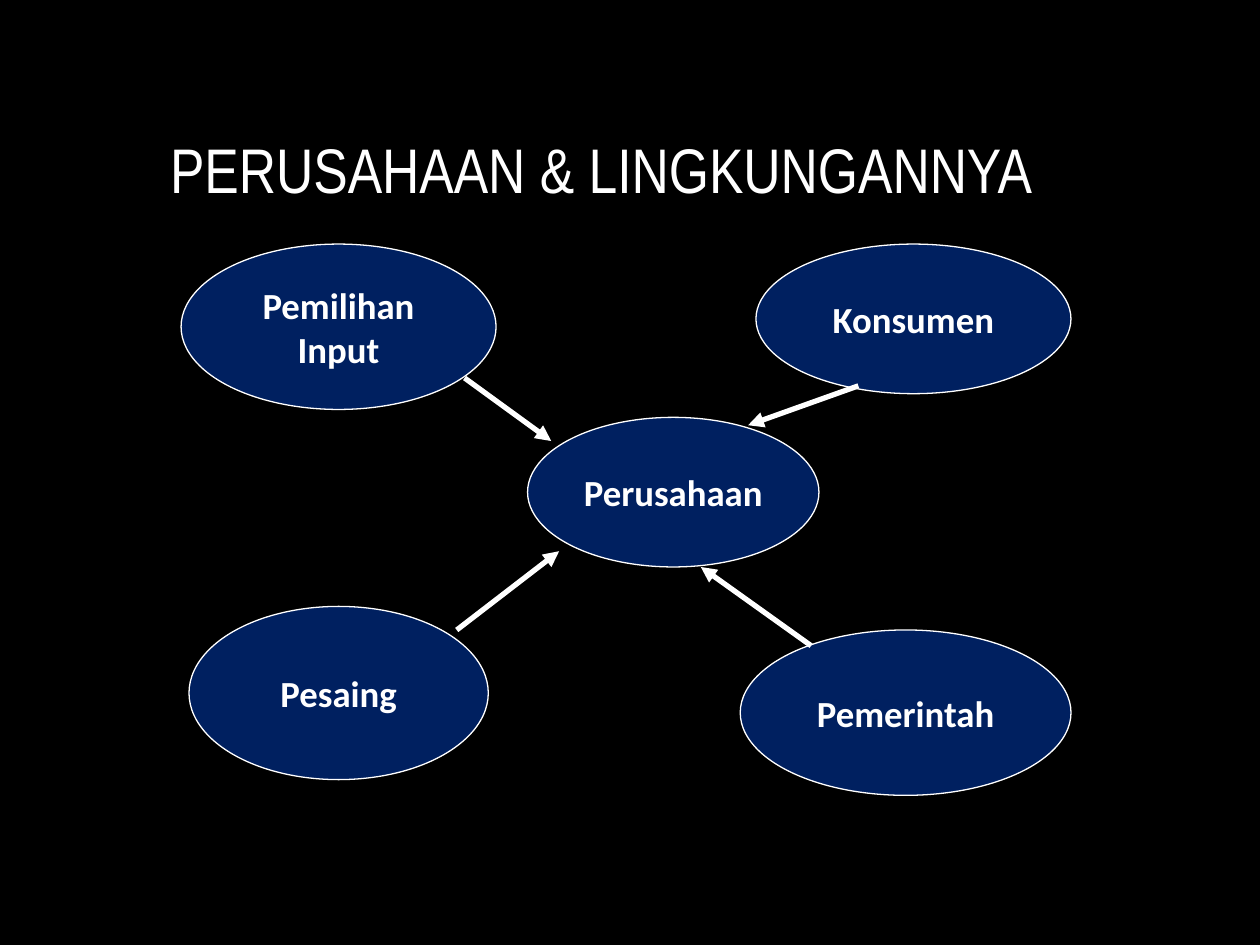
from pptx import Presentation
from pptx.dml.color import RGBColor
from pptx.enum.shapes import MSO_CONNECTOR, MSO_SHAPE
from pptx.enum.text import MSO_ANCHOR, MSO_AUTO_SIZE, PP_ALIGN
from pptx.oxml.ns import qn
from pptx.util import Pt
from lxml.etree import SubElement

TITLE = "PERUSAHAAN & LINGKUNGANNYA"
BLACK, WHITE, NAVY = "000000", "FFFFFF", "002060"
NODES = [
    ("Perusahaan", 301.5, 238.5, 166.5, 85.5),
    ("Pesaing", 108, 346.5, 171, 99),
    ("Pemerintah", 423, 360, 189, 94.5),
    ("Pemilihan\nInput", 103.5, 139.5, 180, 94.5),
    ("Konsumen", 432, 139.5, 180, 85.5),
]
ARROWS = [
    (265.5, 216, 315, 252),
    (490.5, 220.5, 427.5, 243),
    (261, 360, 319.5, 315),
    (463.5, 369, 400.5, 324),
]


def color(code):
    return RGBColor.from_string(code)


def style(frame, font, size, bold, align):
    for para in frame.paragraphs:
        para.alignment = align
        for run in para.runs:
            run.font.name = font
            run.font.size = Pt(size)
            run.font.bold = bold
            run.font.color.rgb = color(WHITE)


def add_title(slide):
    title = slide.shapes.title
    title.left, title.top = Pt(90), Pt(67.5)
    title.width, title.height = Pt(540), Pt(54)
    frame = title.text_frame
    frame.text = TITLE
    frame.auto_size = MSO_AUTO_SIZE.NONE
    frame.vertical_anchor = MSO_ANCHOR.BOTTOM
    frame.paragraphs[0].space_before = Pt(4)
    style(frame, "Arial Narrow", 36, False, PP_ALIGN.LEFT)


def add_node(slide, text, *box):
    node = slide.shapes.add_shape(MSO_SHAPE.OVAL, *map(Pt, box))
    node.shadow.inherit = False
    node.fill.solid()
    node.fill.fore_color.rgb = color(NAVY)
    node.line.color.rgb = color(WHITE)
    node.line.width = Pt(0.75)
    frame = node.text_frame
    frame.text = text
    frame.word_wrap = False
    frame.vertical_anchor = MSO_ANCHOR.MIDDLE
    style(frame, "Calibri", 21, True, PP_ALIGN.CENTER)


def add_arrow(slide, *ends):
    arrow = slide.shapes.add_connector(MSO_CONNECTOR.STRAIGHT, *map(Pt, ends))
    arrow.line.color.rgb = color(WHITE)
    arrow.line.width = Pt(3)
    SubElement(arrow.line._get_or_add_ln(), qn("a:tailEnd"), type="triangle")
    SubElement(arrow._element.spPr, qn("a:effectLst"))


def main():
    deck = Presentation()
    deck.slide_width, deck.slide_height = Pt(720), Pt(540)
    slide = deck.slides.add_slide(deck.slide_layouts.get_by_name("Title Only"))
    slide.background.fill.solid()
    slide.background.fill.fore_color.rgb = color(BLACK)
    add_title(slide)
    for node in NODES:
        add_node(slide, *node)
    for ends in ARROWS:
        add_arrow(slide, *ends)
    deck.save("out.pptx")


if __name__ == "__main__":
    main()
